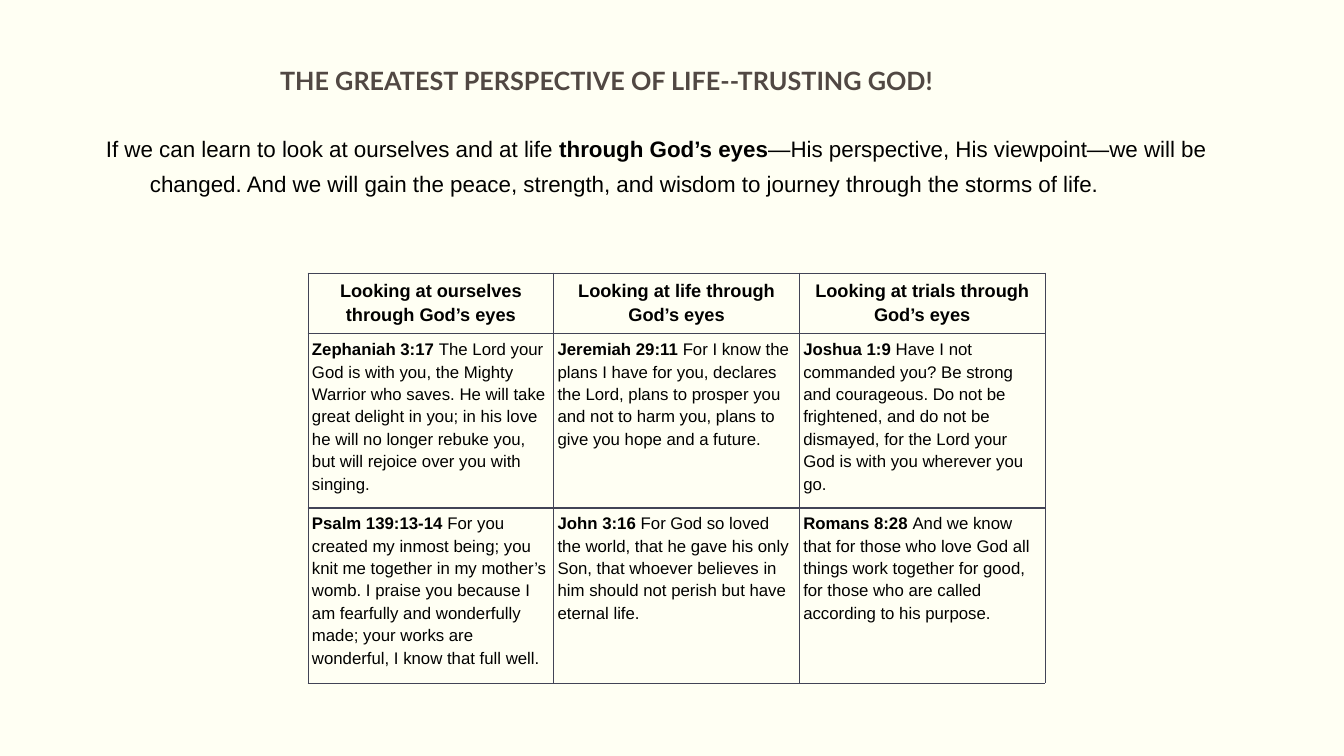
from dataclasses import dataclass

from lxml.etree import SubElement
from pptx import Presentation
from pptx.dml.color import RGBColor
from pptx.enum.text import MSO_ANCHOR, MSO_AUTO_SIZE, PP_ALIGN as Align
from pptx.oxml.ns import qn
from pptx.util import Emu, Pt

SLIDE_WIDTH, SLIDE_HEIGHT = 1344, 756
EMU_PER_PX = 12192000 / SLIDE_WIDTH


@dataclass(frozen=True)
class Theme:
    background: str = "FFFFF3"
    heading: str = "514843"
    ink: str = "000000"
    rule: str = "424456"
    heading_font: str = "Lato"
    body_font: str = "Arial"
    heading_size: int = 18
    intro_size: int = 16
    column_size: int = 13
    verse_size: int = 12
    rule_width: float = 0.5


THEME = Theme()

TITLE = "THE GREATEST PERSPECTIVE OF LIFE--TRUSTING GOD!"
INTRO = [
    ("If we can learn to look at ourselves and at life ", False),
    ("through God’s eyes", True),
    ("—His perspective, His viewpoint—we will be changed. And we will gain the peace, "
     "strength, and wisdom to journey through the storms of life.", False),
]
COLUMNS = [
    "Looking at ourselves through God’s eyes",
    "Looking at life through God’s eyes",
    "Looking at trials through God’s eyes",
]
PROMISES = [
    ("Zephaniah 3:17 ",
     "The Lord your God is with you, the Mighty Warrior who saves. He will take great delight "
     "in you; in his love he will no longer rebuke you, but will rejoice over you with singing."),
    ("Jeremiah 29:11 ",
     "For I know the plans I have for you, declares the Lord, plans to prosper you and not to "
     "harm you, plans to give you hope and a future."),
    ("Joshua 1:9 ",
     "Have I not commanded you? Be strong and courageous. Do not be frightened, and do not be "
     "dismayed, for the Lord your God is with you wherever you go."),
]
ASSURANCES = [
    ("Psalm 139:13-14 ",
     "For you created my inmost being; you knit me together in my mother’s womb. I praise you "
     "because I am fearfully and wonderfully made; your works are wonderful, I know that full "
     "well."),
    ("John 3:16 ",
     "For God so loved the world, that he gave his only Son, that whoever believes in him "
     "should not perish but have eternal life."),
    ("Romans 8:28 ",
     "And we know that for those who love God all things work together for good, for those who "
     "are called according to his purpose."),
]


def px(length):
    return Emu(round(length * EMU_PER_PX))


def add_run(paragraph, text, size, bold=False, font=THEME.body_font, color=THEME.ink):
    run = paragraph.add_run()
    run.text = text
    run.font.name = font
    run.font.size = Pt(size)
    run.font.bold = bold
    run.font.color.rgb = RGBColor.from_string(color)


def place_title(slide, left, top, width, height):
    title = slide.shapes.title
    title.left, title.top, title.width, title.height = map(px, (left, top, width, height))
    frame = title.text_frame
    frame.word_wrap = True
    frame.auto_size = MSO_AUTO_SIZE.NONE
    frame.vertical_anchor = MSO_ANCHOR.TOP
    heading = frame.paragraphs[0]
    heading.alignment = Align.LEFT
    add_run(heading, TITLE, THEME.heading_size, True, THEME.heading_font, THEME.heading)


def place_intro(slide, left, top, width, height):
    frame = slide.shapes.add_textbox(*map(px, (left, top, width, height))).text_frame
    frame.word_wrap = True
    intro = frame.paragraphs[0]
    intro.line_spacing = 1.3
    properties = intro._p.get_or_add_pPr()
    properties.set("marL", str(px(50)))
    properties.set("indent", str(px(-44)))
    for text, bold in INTRO:
        add_run(intro, text, THEME.intro_size, bold)


def rule_cell(cell):
    properties = cell._tc.get_or_add_tcPr()
    for side in ("a:lnL", "a:lnR", "a:lnT", "a:lnB"):
        line = SubElement(properties, qn(side), w=str(Pt(THEME.rule_width)))
        SubElement(SubElement(line, qn("a:solidFill")), qn("a:srgbClr"), val=THEME.rule)
    cell.fill.background()


def place_table(slide, left, top, width, row_heights, rows):
    table = slide.shapes.add_table(
        len(rows), len(rows[0]), px(left), px(top), px(width), px(sum(row_heights))).table
    table.first_row = table.horz_banding = False
    for column in table.columns:
        column.width = px(width / len(rows[0]))
    for row, height, entries in zip(table.rows, row_heights, rows):
        row.height = px(height)
        for cell, (reference, verse) in zip(row.cells, entries):
            cell.margin_left = cell.margin_right = px(4)
            cell.margin_top = cell.margin_bottom = px(4)
            cell.vertical_anchor = MSO_ANCHOR.TOP
            rule_cell(cell)
            paragraph = cell.text_frame.paragraphs[0]
            paragraph.line_spacing = 1.19
            if verse:
                paragraph.alignment = Align.LEFT
                add_run(paragraph, reference, THEME.verse_size, True)
                add_run(paragraph, verse, THEME.verse_size)
            else:
                paragraph.alignment = Align.CENTER
                add_run(paragraph, reference, THEME.column_size, True)


def build_slide(deck):
    slide = deck.slides.add_slide(deck.slide_layouts[5])
    slide.background.fill.solid()
    slide.background.fill.fore_color.rgb = RGBColor.from_string(THEME.background)
    place_title(slide, 270, 60, 915, 40)
    place_intro(slide, 90, 122, 1214, 105)
    headings = [(column, "") for column in COLUMNS]
    place_table(slide, 308, 273, 737, [57, 175], [headings, PROMISES])
    place_table(slide, 308, 507, 737, [176], [ASSURANCES])


def main():
    deck = Presentation()
    deck.slide_width, deck.slide_height = px(SLIDE_WIDTH), px(SLIDE_HEIGHT)
    build_slide(deck)
    deck.save("out.pptx")


if __name__ == "__main__":
    main()
